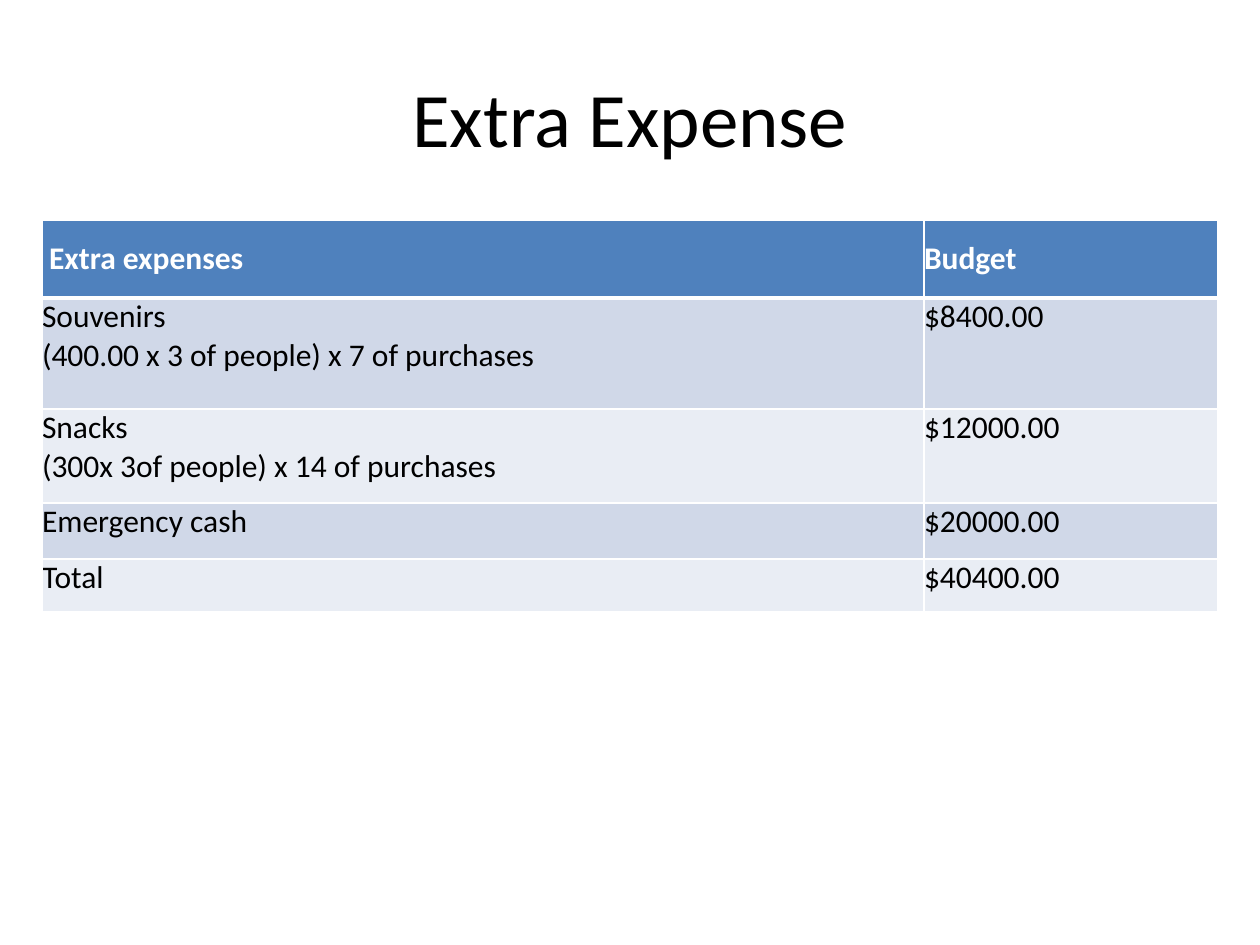
import pptx
import pptx.dml.color
import pptx.enum.text
import pptx.oxml
import pptx.oxml.ns
import pptx.util

RGBColor = pptx.dml.color.RGBColor
ANCHOR = pptx.enum.text.MSO_ANCHOR
ALIGN = pptx.enum.text.PP_ALIGN

BLACK = RGBColor(0x00, 0x00, 0x00)
WHITE = RGBColor(0xFF, 0xFF, 0xFF)
HEADER_BLUE = RGBColor(0x4F, 0x81, 0xBD)
BANDS = (RGBColor(0xD0, 0xD8, 0xE8), RGBColor(0xE9, 0xED, 0xF4))

FONT = "Calibri"
COLUMN_WIDTHS = (882, 294)
ROW_HEIGHTS = (78, 111, 94, 56, 53)
EXPENSES = (
    (" Extra expenses", "Budget"),
    ("Souvenirs\n(400.00 x 3 of people) x 7 of purchases", "$8400.00"),
    ("Snacks\n(300x 3of people) x 14 of purchases", "$12000.00"),
    ("Emergency cash", "$20000.00"),
    ("Total", "$40400.00"),
)


def px(n):
    """Convert pixels (126 to the inch) to EMU."""
    return pptx.util.Emu(round(n * 914400 / 126))


def write_text(tf, text, size=18, color=BLACK, bold=False, align=ALIGN.LEFT):
    """Write one paragraph for each line of text."""
    for i, line in enumerate(text.split("\n")):
        p = tf.add_paragraph() if i else tf.paragraphs[0]
        p.alignment = align
        r = p.add_run()
        r.text = line
        r.font.name = FONT
        r.font.size = pptx.util.Pt(size)
        r.font.bold = bold
        r.font.color.rgb = color


def add_title(s, text, x, y, w, h):
    sp = s.shapes.add_textbox(px(x), px(y), px(w), px(h))
    tf = sp.text_frame
    tf.word_wrap = True
    tf.vertical_anchor = ANCHOR.MIDDLE
    write_text(tf, text, size=44, align=ALIGN.CENTER)


def set_borders(cell, **widths):
    """Draw white borders; widths are points by side (L, R, T, B)."""
    tc_pr = cell._tc.get_or_add_tcPr()
    for i, (side, width) in enumerate(widths.items()):
        line = pptx.oxml.parse_xml(
            f'<a:ln{side} {pptx.oxml.ns.nsdecls("a")} w="{pptx.util.Pt(width)}">'
            f'<a:solidFill><a:srgbClr val="{WHITE}"/></a:solidFill></a:ln{side}>'
        )
        tc_pr.insert(i, line)


def format_cell(cell, text, row):
    header = row == 0
    cell.margin_left = cell.margin_right = 0
    cell.margin_top = cell.margin_bottom = 0
    cell.vertical_anchor = ANCHOR.MIDDLE if header else ANCHOR.TOP
    cell.fill.solid()
    cell.fill.fore_color.rgb = HEADER_BLUE if header else BANDS[(row - 1) % 2]
    set_borders(cell, L=1, R=1, T=3 if row == 1 else 1, B=3 if header else 1)
    write_text(cell.text_frame, text, color=WHITE if header else BLACK, bold=header)


def add_expense_table(s, x, y):
    frame = s.shapes.add_table(
        len(ROW_HEIGHTS), len(COLUMN_WIDTHS),
        px(x), px(y), px(sum(COLUMN_WIDTHS)), px(sum(ROW_HEIGHTS)),
    )
    table = frame.table
    for column, width in zip(table.columns, COLUMN_WIDTHS):
        column.width = px(width)
    for i, (height, texts) in enumerate(zip(ROW_HEIGHTS, EXPENSES)):
        table.rows[i].height = px(height)
        for j, text in enumerate(texts):
            format_cell(table.cell(i, j), text, i)


def main():
    prs = pptx.Presentation()
    prs.slide_width, prs.slide_height = px(1260), px(945)
    s = prs.slides.add_slide(prs.slide_layouts[6])

    # Heading
    add_title(s, "Extra Expense", 63, 38, 1134, 157)

    # Budget table
    add_expense_table(s, 42, 220)

    prs.save("out.pptx")


if __name__ == "__main__":
    main()
